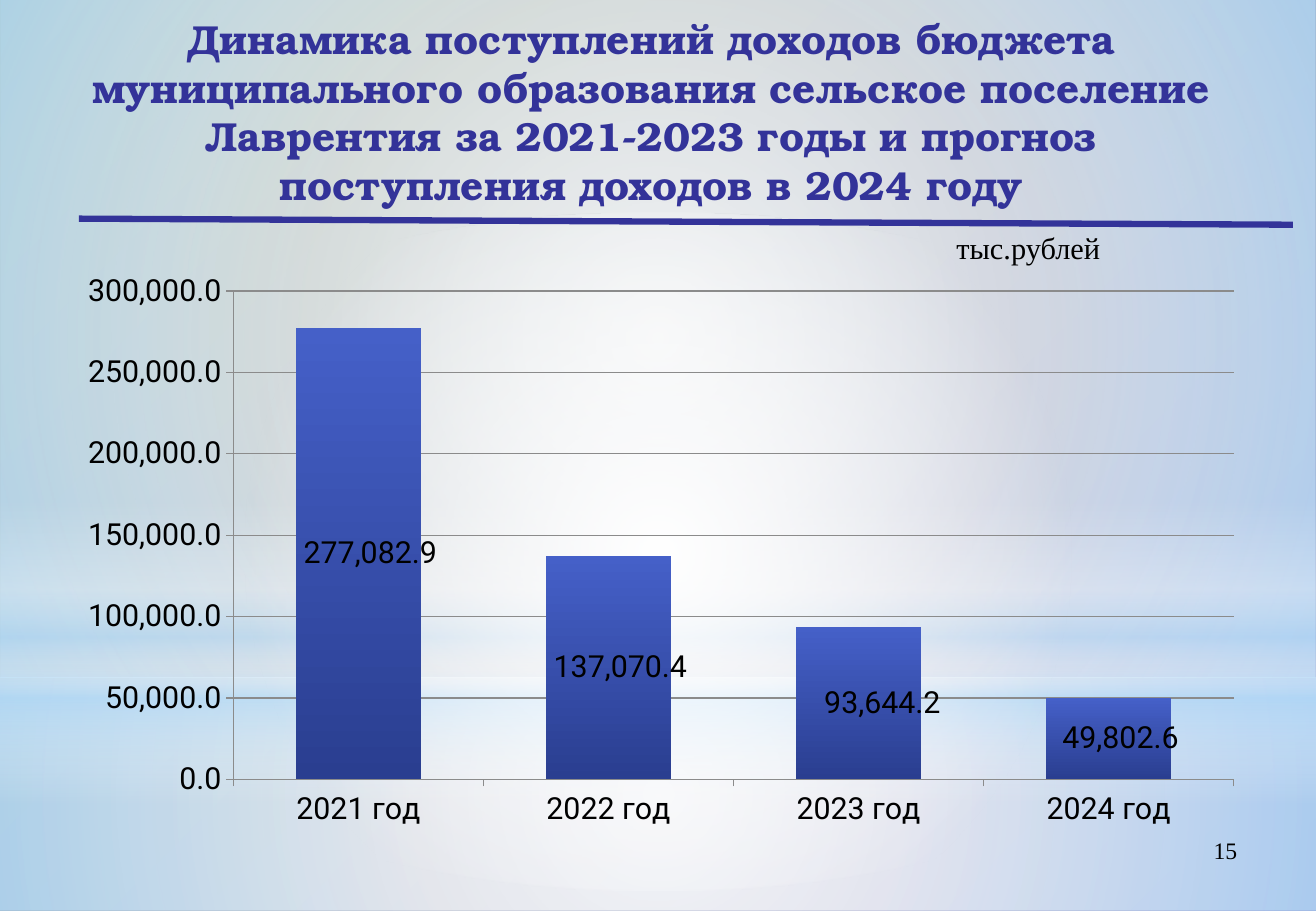
from dataclasses import dataclass

from lxml.etree import SubElement
from pptx import Presentation
from pptx.chart.data import CategoryChartData
from pptx.dml.color import RGBColor
from pptx.enum.chart import XL_CHART_TYPE, XL_LABEL_POSITION, XL_TICK_MARK
from pptx.enum.shapes import MSO_CONNECTOR, MSO_SHAPE
from pptx.enum.text import MSO_ANCHOR, MSO_AUTO_SIZE, PP_ALIGN
from pptx.oxml import parse_xml
from pptx.oxml.ns import nsdecls, qn
from pptx.util import Inches, Pt

WIDTH, HEIGHT = 10.84, 7.5
NAVY, BLACK, GREY = "333399", "000000", "8B8B8B"
SERIF = "Times New Roman"
NUMBER_FORMAT = "#,##0.0"


@dataclass(frozen=True)
class Stop:
    position: int
    color: str
    opacity: int = 100


@dataclass(frozen=True)
class Glow:
    """A full-width gradient band; without an angle it radiates from its centre."""
    top: float
    height: float
    stops: tuple[Stop, ...]
    geometry: MSO_SHAPE = MSO_SHAPE.RECTANGLE
    angle: int | None = None


@dataclass(frozen=True)
class Income:
    year: str
    amount: float
    label_shift: float


GLOWS = (
    Glow(5.58, 1.92, (Stop(0, "FFFFFF", 91), Stop(37, "FFFFFF", 76), Stop(100, "B4DCFA", 79))),
    Glow(0, 5.58, (Stop(0, "FFFFFF", 89), Stop(48, "FFFFFF", 62), Stop(100, "B4DCFA", 79))),
    Glow(4.12, 2.5, (Stop(0, "FFFFFF", 0), Stop(29, "FFFFFF", 30), Stop(45, "B4DCFA", 40),
                     Stop(55, "FFFFFF", 26), Stop(65, "B4DCFA", 60), Stop(100, "FFFFFF", 0)),
         angle=90),
    Glow(1.75, 5.58, (Stop(0, "FFFFFF"), Stop(56, "FFFFFF", 0)), MSO_SHAPE.OVAL),
)
INCOMES = (
    Income("2021 год", 277082.9, 0.01),
    Income("2022 год", 137070.4, 0.01),
    Income("2023 год", 93644.2, 0.02),
    Income("2024 год", 49802.6, 0.01),
)


def rgb(color: str) -> RGBColor:
    return RGBColor.from_string(color)


def set_gradient(fill, owner, stops: tuple[Stop, ...], angle: int | None) -> None:
    """Fill with stops that may be transparent, linear or circular."""
    fill.gradient()
    stop_xml = "".join(
        f'<a:gs pos="{stop.position * 1000}"><a:srgbClr val="{stop.color}">'
        f'<a:alpha val="{stop.opacity * 1000}"/></a:srgbClr></a:gs>' for stop in stops)
    if angle is None:
        direction = ('<a:path path="circle"><a:fillToRect l="50000" t="50000" '
                     'r="50000" b="50000"/></a:path>')
    else:
        direction = f'<a:lin ang="{angle * 60000}" scaled="0"/>'
    default = owner.find(".//" + qn("a:gradFill"))
    default.getparent().replace(default, parse_xml(
        f'<a:gradFill {nsdecls("a")} rotWithShape="1"><a:gsLst>{stop_xml}</a:gsLst>'
        f'{direction}</a:gradFill>'))


def add_glow(page, glow: Glow) -> None:
    shape = page.shapes.add_shape(glow.geometry, 0, Inches(glow.top),
                                  Inches(WIDTH), Inches(glow.height))
    shape.shadow.inherit = False
    shape.line.fill.background()
    set_gradient(shape.fill, shape.element, glow.stops, glow.angle)


def write(box, text: str, size: float, font: str, color: str,
          align: PP_ALIGN, bold: bool = False) -> None:
    para = box.text_frame.paragraphs[0]
    para.alignment = align
    span = para.add_run()
    span.text = text
    span.font.size = Pt(size)
    span.font.name = font
    span.font.bold = bold
    span.font.color.rgb = rgb(color)


def add_title(page) -> None:
    title = page.shapes.title
    page.shapes.element.append(title.element)
    title.left, title.top = Inches(0.49), Inches(0.23)
    title.width, title.height = Inches(9.75), Inches(1.37)
    frame = title.text_frame
    frame.word_wrap = True
    frame.auto_size = MSO_AUTO_SIZE.NONE
    frame.vertical_anchor = MSO_ANCHOR.MIDDLE
    write(title, "Динамика поступлений доходов бюджета муниципального образования "
          "сельское поселение Лаврентия за 2021-2023 годы и прогноз поступления "
          "доходов в 2024 году", 24, "TeX Gyre Bonum", NAVY, PP_ALIGN.CENTER, bold=True)


def add_rule(page) -> None:
    rule = page.shapes.add_connector(MSO_CONNECTOR.STRAIGHT, Inches(0.65), Inches(1.8),
                                     Inches(10.65), Inches(1.85))
    rule.line.color.rgb = rgb(NAVY)
    rule.line.width = Pt(3.75)
    SubElement(rule.element.spPr, qn("a:effectLst"))


def place_plot_area(chart) -> None:
    plot_area = chart.element.find(".//" + qn("c:plotArea"))
    for layout in plot_area.findall(qn("c:layout")):
        plot_area.remove(layout)
    plot_area.insert(0, parse_xml(
        f'<c:layout {nsdecls("c")}><c:manualLayout><c:layoutTarget val="inner"/>'
        '<c:xMode val="edge"/><c:yMode val="edge"/><c:x val="0.14"/><c:y val="0.05"/>'
        '<c:w val="0.84"/><c:h val="0.85"/></c:manualLayout></c:layout>'))


def label_bars(series) -> None:
    labels = series.data_labels
    labels.show_value = True
    labels.number_format = NUMBER_FORMAT
    labels.number_format_is_linked = False
    for index in range(len(INCOMES)):
        series.points[index].data_label.position = XL_LABEL_POSITION.CENTER
    for label, income in zip(series._element.iter(qn("c:dLbl")), INCOMES):
        label.insert(1, parse_xml(
            f'<c:layout {nsdecls("c")}><c:manualLayout><c:x val="{income.label_shift}"/>'
            '<c:y val="0"/></c:manualLayout></c:layout>'))


def add_income_chart(page) -> None:
    data = CategoryChartData(number_format=NUMBER_FORMAT)
    data.categories = [income.year for income in INCOMES]
    data.add_series("Series 1", [income.amount for income in INCOMES])
    chart = page.shapes.add_chart(XL_CHART_TYPE.COLUMN_STACKED, Inches(0.55), Inches(2.16),
                                  Inches(9.81), Inches(4.73), data).chart
    chart.has_legend = False
    chart.has_title = False
    chart.font.size = Pt(18)
    chart.font.name = "Roboto"
    chart.font.color.rgb = rgb(BLACK)
    place_plot_area(chart)

    for axis in (chart.category_axis, chart.value_axis):
        axis.major_tick_mark = XL_TICK_MARK.OUTSIDE
        axis.format.line.color.rgb = rgb(GREY)
    values = chart.value_axis
    values.minimum_scale, values.maximum_scale, values.major_unit = 0, 300000, 50000
    values.has_major_gridlines = True
    values.major_gridlines.format.line.color.rgb = rgb(GREY)
    values.tick_labels.number_format = NUMBER_FORMAT
    values.tick_labels.number_format_is_linked = False

    plot = chart.plots[0]
    plot.gap_width = plot.overlap = 100
    plot.vary_by_categories = False
    series = plot.series[0]
    set_gradient(series.format.fill, series._element,
                 (Stop(0, "4560C8"), Stop(100, "2A3E90")), 90)
    label_bars(series)


def main() -> None:
    deck = Presentation()
    deck.slide_width, deck.slide_height = Inches(WIDTH), Inches(HEIGHT)
    page = deck.slides.add_slide(deck.slide_layouts.get_by_name("Title Only"))
    set_gradient(page.background.fill, page.element,
                 (Stop(0, "96AB94"), Stop(100, "8488C4")), 45)
    for glow in GLOWS:
        add_glow(page, glow)

    page_number = page.shapes.add_textbox(Inches(7.76), Inches(6.83), Inches(2.53), Inches(0.52))
    page_number.text_frame.word_wrap = True
    write(page_number, "15", 14, SERIF, BLACK, PP_ALIGN.RIGHT)
    add_title(page)
    add_rule(page)
    add_income_chart(page)
    unit = page.shapes.add_textbox(Inches(7.78), Inches(1.84), Inches(1.4), Inches(0.4))
    unit.text_frame.word_wrap = False
    write(unit, "тыс.рублей", 18, SERIF, BLACK, PP_ALIGN.LEFT)
    deck.save("out.pptx")


if __name__ == "__main__":
    main()
